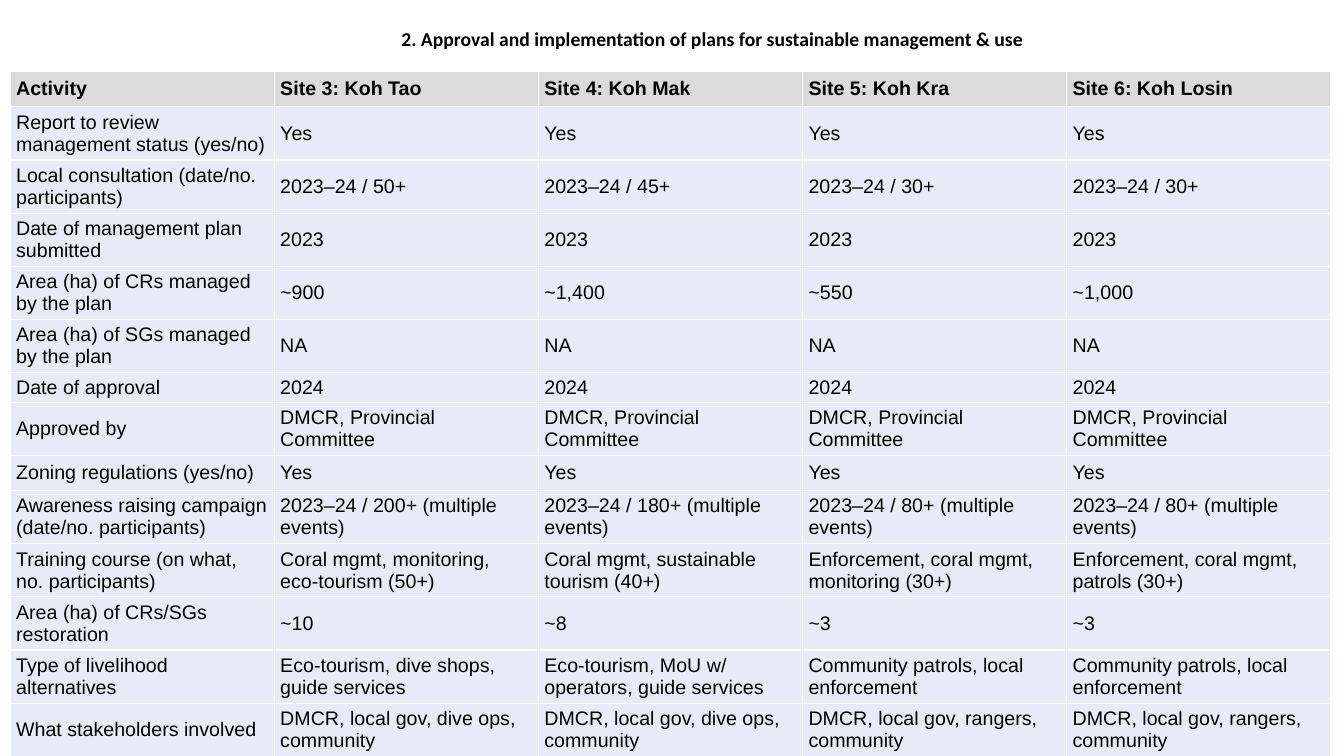
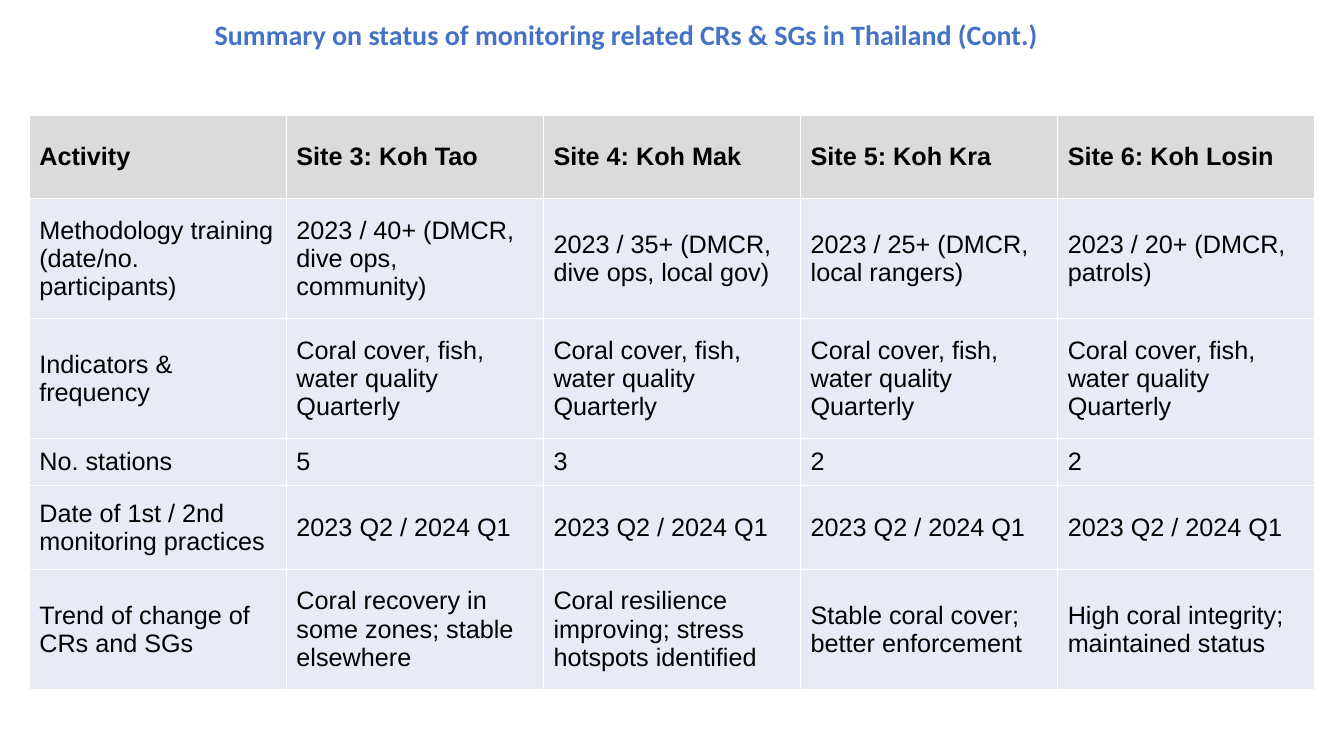
from lxml import etree
from pptx import Presentation
from pptx.dml.color import RGBColor
from pptx.enum import text
from pptx.oxml import ns
from pptx.util import Inches, Pt

BLACK = RGBColor(0x00, 0x00, 0x00)
WHITE = RGBColor(0xFF, 0xFF, 0xFF)
BLUE = RGBColor(0x44, 0x72, 0xC4)
HEADER_GREY = RGBColor(0xDB, 0xDB, 0xDB)
BODY_LAVENDER = RGBColor(0xE8, 0xEB, 0xF5)

HEADER = ["Activity", "Site 3: Koh Tao", "Site 4: Koh Mak",
          "Site 5: Koh Kra", "Site 6: Koh Losin"]
SITE_COUNT = len(HEADER) - 1

# Row heights of the management table
ONE_LINE, TIGHT_LINE, TWO_LINES = 0.35, 0.29, 0.52


def same(activity, value):
    """Give a row with one value for every site."""
    return [activity] + [value] * SITE_COUNT


# Each row is its height and its cells
MANAGEMENT_ROWS = [
    (ONE_LINE, HEADER),
    (TWO_LINES, same("Report to review management status (yes/no)", "Yes")),
    (TWO_LINES, ["Local consultation (date/no. participants)", "2023–24 / 50+",
                 "2023–24 / 45+", "2023–24 / 30+", "2023–24 / 30+"]),
    (TWO_LINES, same("Date of management plan submitted", "2023")),
    (TWO_LINES, ["Area (ha) of CRs managed by the plan",
                 "~900", "~1,400", "~550", "~1,000"]),
    (TWO_LINES, same("Area (ha) of SGs managed by the plan", "NA")),
    (TIGHT_LINE, same("Date of approval", "2024")),
    (TWO_LINES, same("Approved by", "DMCR, Provincial Committee")),
    (ONE_LINE, same("Zoning regulations (yes/no)", "Yes")),
    (TWO_LINES, ["Awareness raising campaign (date/no. participants)",
                 "2023–24 / 200+ (multiple events)",
                 "2023–24 / 180+ (multiple events)",
                 "2023–24 / 80+ (multiple events)",
                 "2023–24 / 80+ (multiple events)"]),
    (TWO_LINES, ["Training course (on what, no. participants)",
                 "Coral mgmt, monitoring, eco-tourism (50+)",
                 "Coral mgmt, sustainable tourism (40+)",
                 "Enforcement, coral mgmt, monitoring (30+)",
                 "Enforcement, coral mgmt, patrols (30+)"]),
    (TWO_LINES, ["Area (ha) of CRs/SGs restoration", "~10", "~8", "~3", "~3"]),
    (TWO_LINES, ["Type of livelihood alternatives",
                 "Eco-tourism, dive shops, guide services",
                 "Eco-tourism, MoU w/ operators, guide services",
                 "Community patrols, local enforcement",
                 "Community patrols, local enforcement"]),
    (TWO_LINES, ["What stakeholders involved",
                 "DMCR, local gov, dive ops, community",
                 "DMCR, local gov, dive ops, community",
                 "DMCR, local gov, rangers, community",
                 "DMCR, local gov, rangers, community"]),
]

MONITORING_ROWS = [
    (0.83, HEADER),
    (1.19, ["Methodology training (date/no. participants)",
            "2023 / 40+ (DMCR, dive ops, community)",
            "2023 / 35+ (DMCR, dive ops, local gov)",
            "2023 / 25+ (DMCR, local rangers)",
            "2023 / 20+ (DMCR, patrols)"]),
    (1.19, same("Indicators & frequency",
                "Coral cover, fish, water quality\nQuarterly")),
    (0.47, ["No. stations", "5", "3", "2", "2"]),
    (0.83, same("Date of 1st / 2nd monitoring practices",
                "2023 Q2 / 2024 Q1")),
    (1.19, ["Trend of change of CRs and SGs",
            "Coral recovery in some zones; stable elsewhere",
            "Coral resilience improving; stress hotspots identified",
            "Stable coral cover; better enforcement",
            "High coral integrity; maintained status"]),
]


class Deck:
    """Holds the shared style and the slide being built."""

    title_font = "Calibri"
    table_font = "Arial"

    def __init__(self):
        self.presentation = Presentation()
        self.presentation.slide_width = Inches(13.33)
        self.presentation.slide_height = Inches(7.5)
        self.slide = None

    def add_slide(self):
        layout = self.presentation.slide_layouts[6]
        self.slide = self.presentation.slides.add_slide(layout)

    def format_font(self, font, color, **values):
        for name, value in values.items():
            setattr(font, name, value)
        font.color.rgb = color

    def title(self, words, box, size, color, **paragraph_format):
        shape = self.slide.shapes.add_textbox(*map(Inches, box))
        frame = shape.text_frame
        frame.word_wrap = True
        frame.margin_left = Inches(0.2)
        paragraph = frame.paragraphs[0]
        paragraph.text = words
        for name, value in paragraph_format.items():
            setattr(paragraph, name, value)
        self.format_font(paragraph.runs[0].font, color, name=self.title_font,
                         size=Pt(size), bold=True)

    def table(self, rows, left, top, column_width, size, margins):
        column_count = len(rows[0][1])
        height = sum(row_height for row_height, _ in rows)
        table = self.slide.shapes.add_table(
            len(rows), column_count, Inches(left), Inches(top),
            Inches(column_width * column_count), Inches(height)).table
        for column in table.columns:
            column.width = Inches(column_width)
        for row_index, (row_height, values) in enumerate(rows):
            table.rows[row_index].height = Inches(row_height)
            for column_index, words in enumerate(values):
                self.cell(table.cell(row_index, column_index), words,
                          size, margins, is_header=row_index == 0)

    def cell(self, cell, words, size, margins, is_header):
        cell.text = words
        cell.vertical_anchor = text.MSO_ANCHOR.MIDDLE
        horizontal, vertical = map(Inches, margins)
        cell.margin_left = cell.margin_right = horizontal
        cell.margin_top = cell.margin_bottom = vertical
        cell.fill.solid()
        cell.fill.fore_color.rgb = HEADER_GREY if is_header else BODY_LAVENDER
        for paragraph in cell.text_frame.paragraphs:
            for run in paragraph.runs:
                self.format_font(run.font, BLACK, name=self.table_font,
                                 size=Pt(size), bold=is_header)
        self.borders(cell)

    def borders(self, cell):
        # Border lines come before the fill in the cell properties
        properties = cell._tc.get_or_add_tcPr()
        for index, side in enumerate(("lnL", "lnR", "lnT", "lnB")):
            line = etree.Element(ns.qn("a:" + side), w=str(Pt(1)))
            fill = etree.SubElement(line, ns.qn("a:solidFill"))
            etree.SubElement(fill, ns.qn("a:srgbClr"), val=str(WHITE))
            properties.insert(index, line)


def main():
    deck = Deck()

    # Management plans
    deck.add_slide()
    deck.title("2. Approval and implementation of plans for sustainable "
               "management & use", (3.68, 0.22, 6.67, 0.34), 14, BLACK,
               alignment=text.PP_ALIGN.CENTER)
    deck.table(MANAGEMENT_ROWS, 0.1, 0.71, 2.62, 14, (0.06, 0.03))

    # Monitoring status
    deck.add_slide()
    deck.title("Summary on status of monitoring related CRs & SGs in "
               "Thailand (Cont.)", (1.93, 0.16, 10.84, 0.65), 20, BLUE,
               line_spacing=0.9)
    deck.table(MONITORING_ROWS, 0.29, 1.14, 2.55, 18, (0.1, 0.05))

    deck.presentation.save("out.pptx")


if __name__ == "__main__":
    main()
